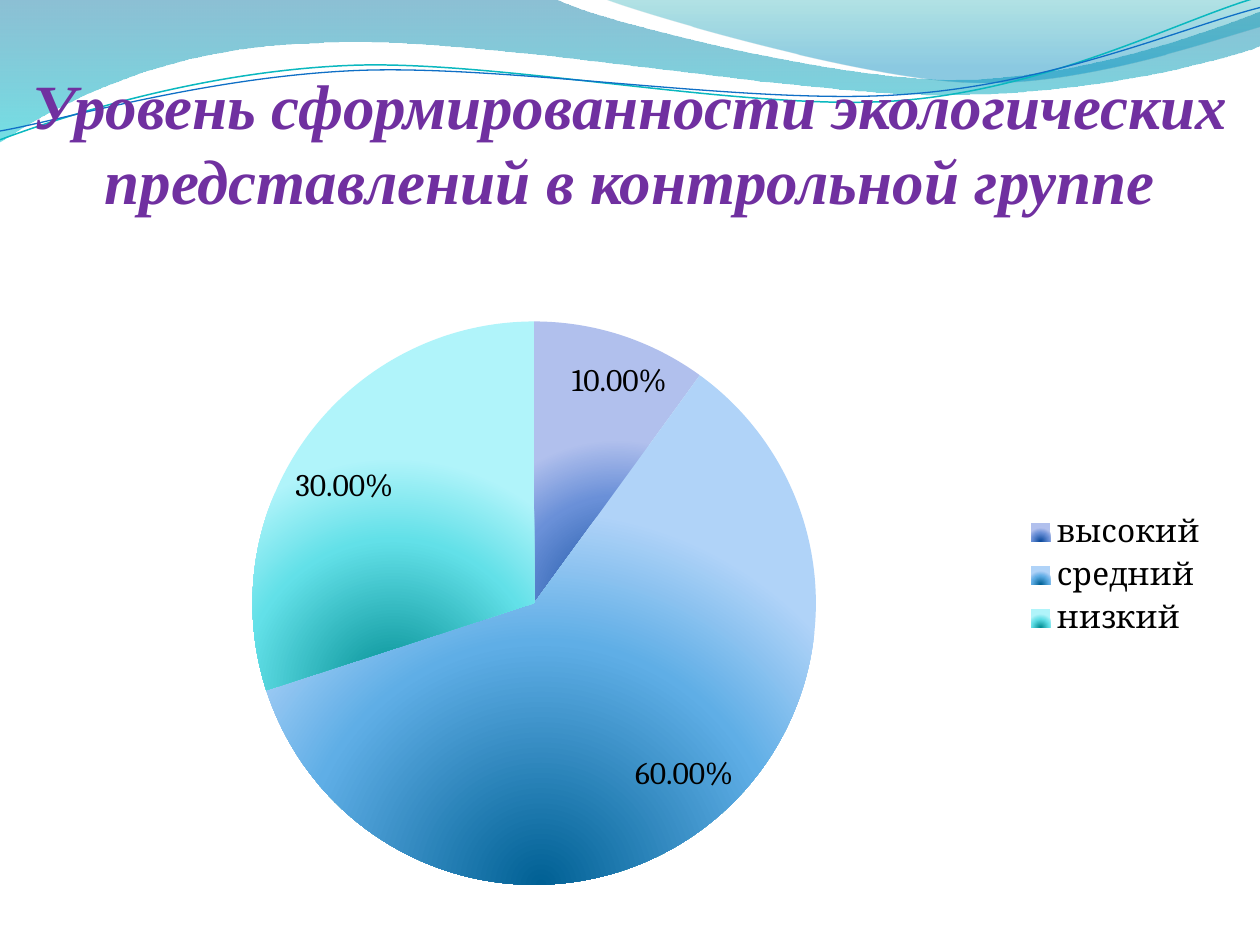
from dataclasses import dataclass

from lxml import etree
from pptx import Presentation
from pptx.chart.data import CategoryChartData
from pptx.dml.color import RGBColor
from pptx.enum.chart import XL_CHART_TYPE, XL_LABEL_POSITION, XL_LEGEND_POSITION
from pptx.enum.text import MSO_ANCHOR, PP_ALIGN
from pptx.oxml import parse_xml
from pptx.oxml.ns import nsdecls, qn
from pptx.util import Inches, Pt

PIE = XL_CHART_TYPE.PIE
BEST = XL_LABEL_POSITION.BEST_FIT
RIGHT = XL_LEGEND_POSITION.RIGHT
CENTER = PP_ALIGN.CENTER
MIDDLE = MSO_ANCHOR.MIDDLE


@dataclass(frozen=True)
class Theme:
    title: str = "7030A0"
    text: str = "000000"
    head_font: str = "Times New Roman"
    body_font: str = "Cambria"
    head_size: int = 36
    body_size: int = 18
    # Dark centre, middle and light rim of each slice
    slices: tuple = (
        ("0B4A9C", "6A90D8", "B1C0ED"),
        ("006094", "5FAEE6", "B0D3F8"),
        ("008C92", "62E0E8", "B0F4FA"),
    )


THEME = Theme()
DOWN = '<a:lin ang="5400000" scaled="0"/>'
RADIAL = ('<a:path path="circle"><a:fillToRect l="50000" t="100000" '
          'r="50000" b="0"/></a:path>')

# Wave outlines: start point, then straight (2 numbers) or curved (6) steps
BANDS = [
    ([(0, 0), (4.4, -0.01), (4.76, 0.17, 6.64, 0.63, 7.58, 0.63),
      (8.53, 0.63, 9.58, 0.26, 10, 0.09), (10.01, 0.36),
      (9.83, 0.44, 8.7, 0.76, 7.46, 0.75), (6.22, 0.75, 3.82, 0.28, 2.57, 0.34),
      (1.29, 0.36, 0.46, 0.83, -0.01, 1.13)],
     [(0, "0074A1", 45), (100, "00C6CF", 55)]),
    ([(4.79, -0.01), (5.09, 0.11, 6.82, 0.62, 7.69, 0.65),
      (8.56, 0.69, 9.61, 0.32, 10, 0.21), (10, 0)],
     [(0, "00A1A9", 30), (80, "008BBF", 45)]),
]
LINES = [
    ([(0, 1.11), (0.48, 0.93, 1.58, 0.57, 2.77, 0.52),
      (3.95, 0.47, 5.93, 0.89, 7.13, 0.8), (8.33, 0.71, 9.38, 0.15, 9.98, -0.02)],
     "0AB8BF", 0.85),
    ([(0, 1.04), (0.47, 0.96, 1.64, 0.61, 2.83, 0.56),
      (4.03, 0.51, 5.97, 0.84, 7.17, 0.75), (8.36, 0.67, 9.41, 0.21, 10, 0.06)],
     "0F6FC6", 0.75),
]


def apply(item, values):
    for name, value in values.items():
        setattr(item, name, value)


def set_font(font, face, size, color, **extra):
    apply(font, {"name": face, "size": Pt(size), **extra})
    font.color.rgb = RGBColor.from_string(color)


def set_grad(fill, props, stops, shade):
    """Fill with stops of (percent, colour, opacity)."""
    fill.solid()
    marks = "".join(
        f'<a:gs pos="{pos * 1000}"><a:srgbClr val="{color}">'
        f'<a:alpha val="{alpha * 1000}"/></a:srgbClr></a:gs>'
        for pos, color, alpha in stops)
    grad = parse_xml(f'<a:gradFill {nsdecls("a")} rotWithShape="1">'
                     f'<a:gsLst>{marks}</a:gsLst>{shade}</a:gradFill>')
    props.replace(props.find(qn("a:solidFill")), grad)


def bend(wave, steps):
    """Turn the straight parts that stand for curves into Bézier curves."""
    parts = wave._element.xpath(".//a:lnTo")
    for part, step in zip(parts, steps[1:]):
        if len(step) == 2:
            continue
        curve = etree.Element(qn("a:cubicBezTo"))
        for x, y in zip(step[::2], step[1::2]):
            spot = etree.SubElement(curve, qn("a:pt"))
            spot.set("x", str(Inches(x) - wave.left))
            spot.set("y", str(Inches(y) - wave.top))
        part.getparent().replace(part, curve)


def add_wave(slide, steps, close):
    points = [(Inches(step[-2]), Inches(step[-1])) for step in steps]
    build = slide.shapes.build_freeform(*points[0])
    build.add_line_segments(points[1:], close=close)
    wave = build.convert_to_shape()
    wave.shadow.inherit = False
    bend(wave, steps)
    return wave


def add_band(slide, steps, stops):
    band = add_wave(slide, steps, True)
    band.line.fill.background()
    set_grad(band.fill, band._element.spPr, stops, DOWN)


def add_line(slide, steps, color, width):
    curve = add_wave(slide, steps, False)
    curve.fill.background()
    curve.line.color.rgb = RGBColor.from_string(color)
    curve.line.width = Pt(width)


def set_plot(chart, x, y, w, h):
    """Pin the inner plot area, in shares of the chart."""
    area = chart._chartSpace.chart.plotArea
    for old in area.findall(qn("c:layout")):
        area.remove(old)
    layout = etree.Element(qn("c:layout"))
    manual = etree.SubElement(layout, qn("c:manualLayout"))
    values = {"layoutTarget": "inner", "xMode": "edge", "yMode": "edge",
              "x": x, "y": y, "w": w, "h": h}
    for name, value in values.items():
        etree.SubElement(manual, qn(f"c:{name}")).set("val", str(value))
    area.insert(0, layout)


def add_pie(slide):
    data = CategoryChartData(number_format="0.00%")
    data.categories = ["высокий", "средний", "низкий"]
    data.add_series("Series 1", [0.1, 0.6, 0.3])
    chart = slide.shapes.add_chart(PIE, Inches(0.31), Inches(1.95),
                                   Inches(9.38), Inches(5.23), data).chart
    apply(chart, {"has_title": False, "has_legend": True})
    apply(chart.legend, {"position": RIGHT, "include_in_layout": False})
    set_font(chart.font, THEME.body_font, THEME.body_size, THEME.text)
    set_plot(chart, 0, 0.115, 0.838, 0.855)

    # Slices
    plot = chart.plots[0]
    plot.vary_by_categories = True
    for i, colors in enumerate(THEME.slices):
        form = plot.series[0].points[i].format
        form.line.fill.background()
        form.fill.solid()
        props = chart._chartSpace.xpath(".//c:dPt/c:spPr")[i]
        stops = [(pos, color, 100) for pos, color in zip((0, 65, 100), colors)]
        set_grad(form.fill, props, stops, RADIAL)

    # Value labels
    plot.has_data_labels = True
    apply(plot.data_labels, {
        "show_value": True, "show_percentage": False, "position": BEST,
        "number_format": "0.00%", "number_format_is_linked": False})


def add_title(slide, text):
    title = slide.shapes.title
    apply(title, {"left": Inches(0), "top": Inches(0.47),
                  "width": Inches(10), "height": Inches(1.31)})
    frame = title.text_frame
    apply(frame, {"text": text, "word_wrap": True, "vertical_anchor": MIDDLE})
    para = frame.paragraphs[0]
    para.alignment = CENTER
    set_font(para.runs[0].font, THEME.head_font, THEME.head_size, THEME.title,
             bold=True, italic=True)
    slide.shapes._spTree.append(title._element)  # bring to front


def main():
    deck = Presentation()
    apply(deck, {"slide_width": Inches(10), "slide_height": Inches(7.5)})
    slide = deck.slides.add_slide(deck.slide_layouts[5])

    # Waves at the top
    for steps, stops in BANDS:
        add_band(slide, steps, stops)
    for steps, color, width in LINES:
        add_line(slide, steps, color, width)

    # Content
    add_pie(slide)
    add_title(slide, "Уровень сформированности экологических "
                     "представлений в контрольной группе")
    deck.save("out.pptx")


if __name__ == "__main__":
    main()
